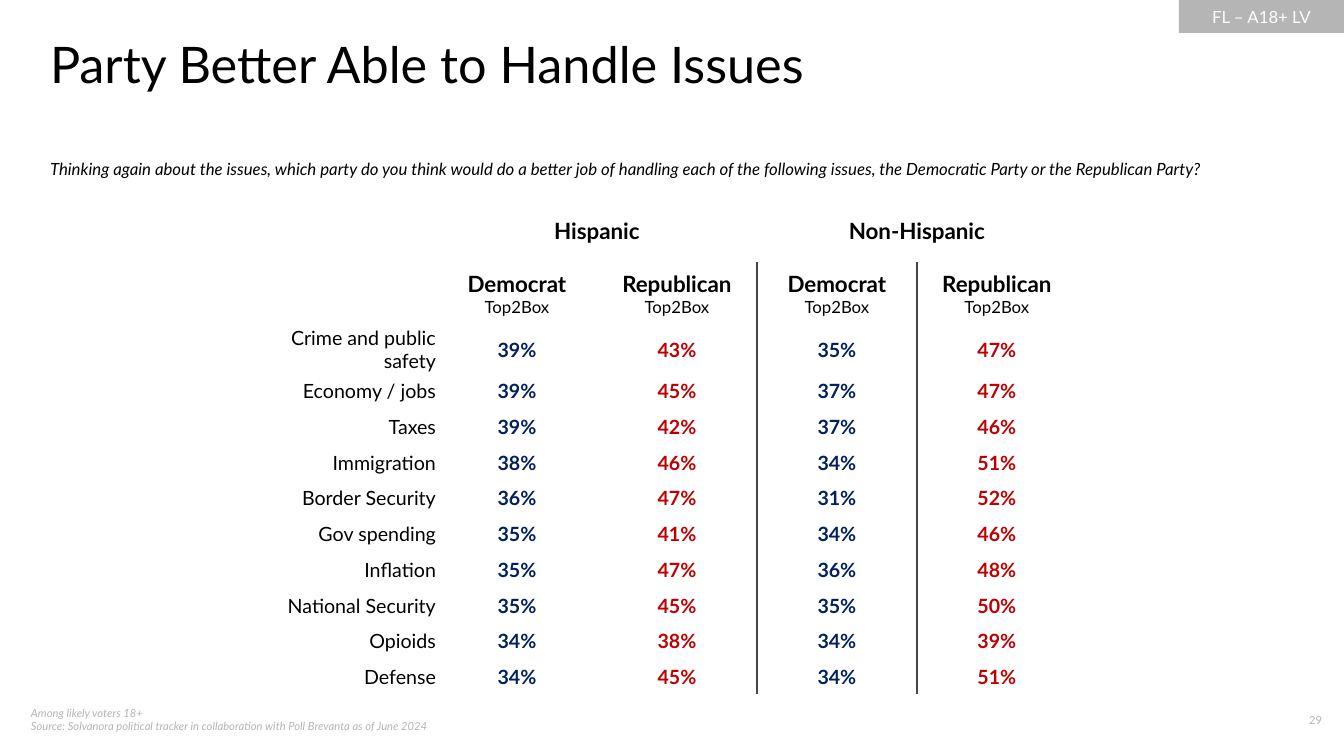
from lxml import etree
from pptx import Presentation
from pptx.dml.color import RGBColor
from pptx.enum.shapes import MSO_SHAPE
from pptx.enum.text import MSO_ANCHOR, MSO_AUTO_SIZE, PP_ALIGN
from pptx.oxml import parse_xml
from pptx.oxml.ns import nsdecls, qn
from pptx.util import Emu, Pt

LEFT, CENTER, RIGHT = PP_ALIGN.LEFT, PP_ALIGN.CENTER, PP_ALIGN.RIGHT
TOP, MIDDLE = MSO_ANCHOR.TOP, MSO_ANCHOR.MIDDLE
RECTANGLE = MSO_SHAPE.RECTANGLE
NO_AUTOFIT = MSO_AUTO_SIZE.NONE

PX_PER_INCH = 100.8
FONT = "Lato"
BLACK, WHITE, GRAY, RULE = "000000", "FFFFFF", "B5B5B5", "454545"
BLUE, RED = "002060", "C00000"
PLAIN_TABLE_STYLE = "{2D5ABB26-0587-4C30-8999-92F81FD0307C}"

GROUPS = ["Hispanic", "Non-Hispanic"]
PARTIES = ["Democrat ", "Republican "]
ISSUES = [
    ("Crime and public safety", 39, 43, 35, 47),
    ("Economy / jobs", 39, 45, 37, 47),
    ("Taxes", 39, 42, 37, 46),
    ("Immigration", 38, 46, 34, 51),
    ("Border Security", 36, 47, 31, 52),
    ("Gov spending", 35, 41, 34, 46),
    ("Inflation", 35, 47, 36, 48),
    ("National Security", 35, 45, 35, 50),
    ("Opioids", 34, 38, 34, 39),
    ("Defense", 34, 45, 34, 51),
]


def px(length):
    return Emu(round(length * 914400 / PX_PER_INCH))


def color(hex_string):
    return RGBColor.from_string(hex_string)


def add_text(para, text, size=12, fill=BLACK, bold=False, italic=False, align=LEFT):
    para.alignment = align
    para.space_before = Pt(0)
    for index, line in enumerate(text.split("\n")):
        if index:
            para.add_line_break()
        span = para.add_run()
        span.text = line
        font = span.font
        font.name, font.size = FONT, Pt(size)
        font.bold, font.italic = bold, italic
        font.color.rgb = color(fill)


class IssueSlide:
    def __init__(self, deck):
        self.page = deck.slides.add_slide(deck.slide_layouts[1])

    def placeholder(self, index, area, text, **style):
        box = self.page.placeholders[index]
        box.left, box.top, box.width, box.height = map(px, area)
        frame = box.text_frame
        frame.margin_left = frame.margin_top = frame.margin_right = frame.margin_bottom = 0
        frame.word_wrap = True
        frame.auto_size = NO_AUTOFIT
        frame.vertical_anchor = TOP
        para = frame.paragraphs[0]
        properties = para._p.get_or_add_pPr()
        properties.set("marL", "0")
        properties.set("indent", "0")
        etree.SubElement(properties, qn("a:buNone"))
        add_text(para, text, **style)

    def text(self, area, text, **style):
        box = self.page.shapes.add_textbox(*map(px, area))
        box.text_frame.word_wrap = True
        add_text(box.text_frame.paragraphs[0], text, **style)

    def tag(self, area, text, **style):
        box = self.page.shapes.add_shape(RECTANGLE, *map(px, area))
        box.shadow.inherit = False
        box.fill.solid()
        box.fill.fore_color.rgb = color(GRAY)
        box.line.fill.background()
        box.text_frame.vertical_anchor = MIDDLE
        add_text(box.text_frame.paragraphs[0], text, **style)

    def table(self, left, top, widths, heights):
        frame = self.page.shapes.add_table(
            len(heights), len(widths), px(left), px(top), px(sum(widths)), px(sum(heights)))
        table = frame.table
        table.first_row = table.horz_banding = False
        table._tbl.tblPr.find(qn("a:tableStyleId")).text = PLAIN_TABLE_STYLE
        for column, width in zip(table.columns, widths):
            column.width = px(width)
        for row, height in zip(table.rows, heights):
            row.height = px(height)
        for cell in table.iter_cells():
            cell.fill.background()
            cell.vertical_anchor = MIDDLE
        return table

    def border(self, cell, side):
        line = parse_xml(
            f'<a:{side} {nsdecls("a")} w="{Pt(1.5)}"><a:solidFill>'
            f'<a:srgbClr val="{RULE}"/></a:solidFill></a:{side}>')
        cell._tc.get_or_add_tcPr().insert(0, line)


def main():
    deck = Presentation()
    deck.slide_width, deck.slide_height = px(1344), px(756)
    slide = IssueSlide(deck)

    # Audience tag, footer and page number
    slide.tag((1179, 0, 165, 33), "FL – A18+ LV", fill=WHITE, align=CENTER)
    slide.text((21, 701, 515, 40),
               "Among likely voters 18+\nSource: Solvanora political tracker "
               "in collaboration with Poll Brevanta as of June 2024",
               size=8, fill=GRAY, italic=True)
    slide.text((1243, 708, 89, 27), "29", size=8, fill=GRAY, align=RIGHT)

    # Title and survey question
    slide.placeholder(0, (50, 33, 1210, 61), "Party Better Able to Handle Issues", size=36)
    slide.placeholder(1, (50, 159, 1210, 40),
                      "Thinking again about the issues, which party do you think would do "
                      "a better job of handling each of the following issues, "
                      "the Democratic Party or the Republican Party?", italic=True)

    # Table grid: two header rows, then equal issue rows
    edges = [round(35.7 * index) for index in range(len(ISSUES) + 1)]
    heights = [62, 63] + [low - high for high, low in zip(edges, edges[1:])]
    table = slide.table(235, 200, [202] + [160] * 4, heights)

    # Group and party headings
    for index, group in enumerate(GROUPS):
        first = 1 + 2 * index
        heading = table.cell(0, first)
        heading.merge(table.cell(0, first + 1))
        add_text(heading.text_frame.paragraphs[0], group, size=16, bold=True, align=CENTER)
        for offset, party in enumerate(PARTIES):
            para = table.cell(1, first + offset).text_frame.paragraphs[0]
            add_text(para, party, size=16, bold=True, align=CENTER)
            add_text(para, "Top2Box", align=CENTER)

    # Issue labels and shares
    for row, (issue, *shares) in enumerate(ISSUES, start=2):
        for column, value in enumerate([issue, *shares]):
            cell = table.cell(row, column)
            cell.margin_left = cell.margin_top = cell.margin_right = px(1)
            cell.margin_bottom = 0
            para = cell.text_frame.paragraphs[0]
            if column == 0:
                add_text(para, value, size=14, align=RIGHT)
            else:
                add_text(para, f"{value}%", size=14, bold=True, align=CENTER,
                         fill=BLUE if column % 2 else RED)

    # Rule between the two groups
    for row in range(1, len(heights)):
        slide.border(table.cell(row, 2), "lnR")
        slide.border(table.cell(row, 3), "lnL")

    deck.save("out.pptx")


if __name__ == "__main__":
    main()
